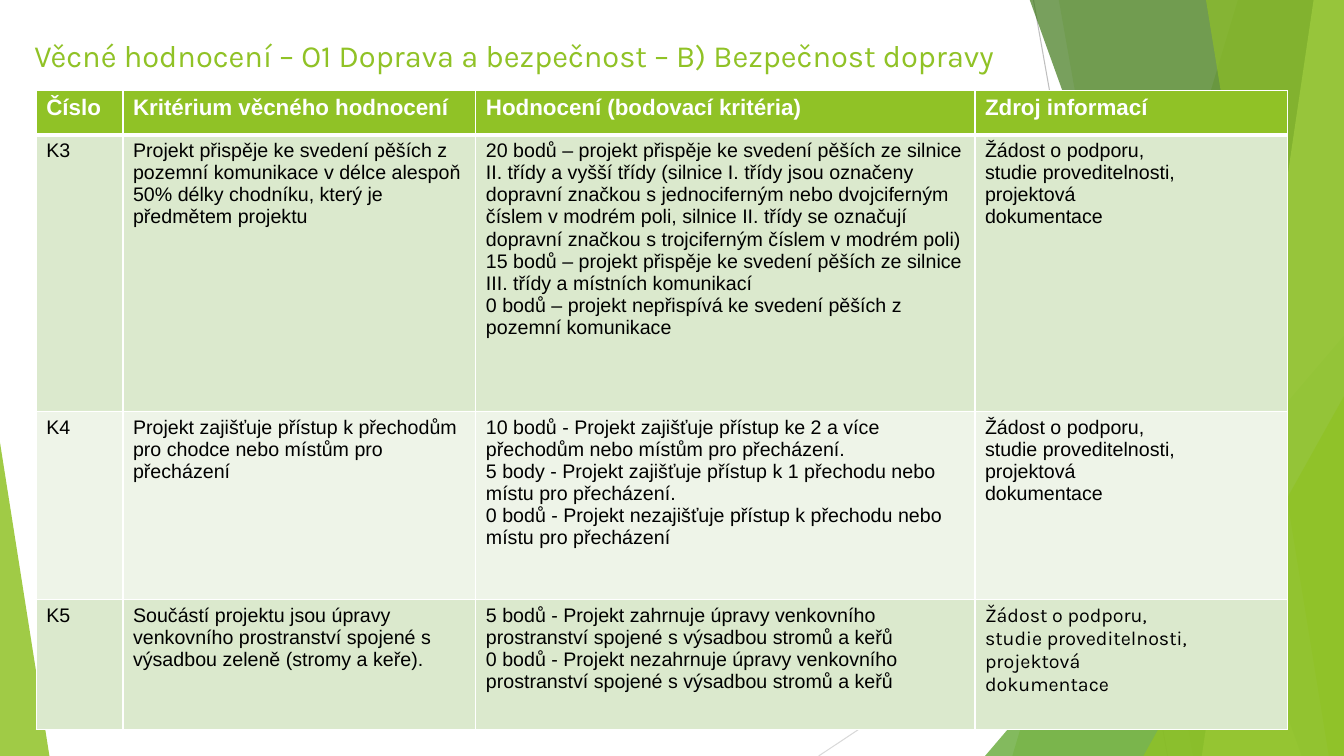
import dataclasses

import pptx
import pptx.dml.color
import pptx.enum.shapes
import pptx.enum.text
import pptx.oxml.ns
import pptx.oxml.xmlchemy
import pptx.util

SCALE = 9144  # EMU per px, 100 px to the inch
qn = pptx.oxml.ns.qn
node = pptx.oxml.xmlchemy.OxmlElement
SHAPE = pptx.enum.shapes.MSO_SHAPE


@dataclasses.dataclass(frozen=True)
class Theme:
    green: str = "90C226"
    leaf: str = "54A021"
    dark: str = "3F7819"
    lime: str = "C0E474"
    white: str = "FFFFFF"
    ink: str = "000000"
    bands: tuple = ("DBE9CD", "EEF4E8")
    grays: tuple = ("BFBFBF", "D9D9D9")
    font: str = "Arial"
    display: str = "Karla"
    title: int = 22
    head: int = 16
    body: int = 14


def px(n):
    return pptx.util.Emu(n * SCALE)


def rgb(code):
    return pptx.dml.color.RGBColor.from_string(code)


class Deck:
    def __init__(self, theme):
        self.theme = theme
        self.prs = pptx.Presentation()
        self.prs.slide_width, self.prs.slide_height = px(1333), px(750)
        self.slide = self.prs.slides.add_slide(self.prs.slide_layouts[5])
        self.shapes = self.slide.shapes

    def style(self, para, size, color, font, bold=False):
        para.font.size = pptx.util.Pt(size)
        para.font.name = font
        para.font.bold = bold
        para.font.color.rgb = rgb(color)

    def title(self, text, x, y, w, h):
        box = self.shapes.title
        box.left, box.top, box.width, box.height = map(px, (x, y, w, h))
        frame = box.text_frame
        frame.text = text
        frame.word_wrap = True
        frame.auto_size = pptx.enum.text.MSO_AUTO_SIZE.NONE
        frame.vertical_anchor = pptx.enum.text.MSO_ANCHOR.TOP
        para = frame.paragraphs[0]
        para.alignment = pptx.enum.text.PP_ALIGN.LEFT
        self.style(para, self.theme.title, self.theme.green, self.theme.display)

    def line(self, x1, y1, x2, y2, color):
        kind = pptx.enum.shapes.MSO_CONNECTOR.STRAIGHT
        line = self.shapes.add_connector(kind, px(x1), px(y1), px(x2), px(y2))
        line.line.color.rgb = rgb(color)
        line.line.width = pptx.util.Pt(0.75)
        line._element.spPr.append(node("a:effectLst"))

    def paint(self, shape, color, alpha):
        shape.shadow.inherit = False
        shape.line.fill.background()
        shape.fill.solid()
        shape.fill.fore_color.rgb = rgb(color)
        tint = node("a:alpha")
        tint.set("val", str(alpha * 1000))
        shape._element.spPr.find(qn("a:solidFill"))[0].append(tint)

    def shard(self, top, foot, color, alpha):
        """Band from a slanted left edge to the right side of the slide."""
        pen = self.shapes.build_freeform(top, -1, scale=SCALE)
        pen.add_line_segments([(1333, -1), (1333, 750), (foot, 750)], close=True)
        self.paint(pen.convert_to_shape(), color, alpha)

    def wedge(self, x, y, w, h, peak, color, alpha):
        shape = self.shapes.add_shape(
            SHAPE.ISOSCELES_TRIANGLE, px(x), px(y), px(w), px(h))
        shape.adjustments[0] = peak
        self.paint(shape, color, alpha)

    def border(self, cell, widths):
        props = cell._tc.get_or_add_tcPr()
        for side, width in zip("LRTB", widths):
            edge = node("a:ln" + side)
            edge.set("w", str(int(pptx.util.Pt(width))))
            fill = node("a:solidFill")
            color = node("a:srgbClr")
            color.set("val", self.theme.white)
            fill.append(color)
            edge.append(fill)
            props.append(edge)

    def table(self, x, y, cols, rows, data):
        t = self.theme
        grid = self.shapes.add_table(
            len(rows), len(cols), px(x), px(y), px(sum(cols)), px(sum(rows))).table
        for col, w in zip(grid.columns, cols):
            col.width = px(w)
        for r, (row, h) in enumerate(zip(grid.rows, rows)):
            row.height = px(h)
            head = r == 0
            for c, (cell, text) in enumerate(zip(row.cells, data[r])):
                self.border(cell, (1, 1, 3 if r == 1 else 1, 3 if head else 1))
                cell.fill.solid()
                cell.fill.fore_color.rgb = rgb(t.green if head else t.bands[(r - 1) % 2])
                cell.text = text
                last = r == len(rows) - 1 and c == len(cols) - 1
                for para in cell.text_frame.paragraphs:
                    self.style(para, t.head if head else t.body,
                               t.white if head else t.ink,
                               t.display if last else t.font, head)


SOURCE = "Žádost o podporu,\nstudie proveditelnosti,\nprojektová\ndokumentace"
DATA = [
    ("Číslo", "Kritérium věcného hodnocení",
     "Hodnocení (bodovací kritéria)", "Zdroj informací"),
    ("K3",
     "Projekt přispěje ke svedení pěších z pozemní komunikace v délce alespoň "
     "50% délky chodníku, který je předmětem projektu",
     "20 bodů – projekt přispěje ke svedení pěších ze silnice II. třídy a vyšší "
     "třídy (silnice I. třídy jsou označeny dopravní značkou s jednociferným "
     "nebo dvojciferným číslem v modrém poli, silnice II. třídy se označují "
     "dopravní značkou s trojciferným číslem v modrém poli)\n"
     "15 bodů – projekt přispěje ke svedení pěších ze silnice III. třídy a "
     "místních komunikací\n"
     "0 bodů – projekt nepřispívá ke svedení pěších z pozemní komunikace",
     SOURCE),
    ("K4",
     "Projekt zajišťuje přístup k přechodům pro chodce nebo místům pro přecházení",
     "10 bodů - Projekt zajišťuje přístup ke 2 a více přechodům nebo místům "
     "pro přecházení.\n"
     "5 body - Projekt zajišťuje přístup k 1 přechodu nebo místu pro přecházení.\n"
     "0 bodů - Projekt nezajišťuje přístup k přechodu nebo místu pro přecházení",
     SOURCE),
    ("K5",
     "Součástí projektu jsou úpravy venkovního prostranství spojené s výsadbou "
     "zeleně (stromy a keře).",
     "5 bodů - Projekt zahrnuje úpravy venkovního prostranství spojené s "
     "výsadbou stromů a keřů\n"
     "0 bodů - Projekt nezahrnuje úpravy venkovního prostranství spojené s "
     "výsadbou stromů a keřů",
     SOURCE),
]


def main():
    t = Theme()
    deck = Deck(t)

    # Green facets at the slide edges
    deck.line(1025, 0, 1158, 750, t.grays[0])
    deck.line(1333, 403, 812, 750, t.grays[1])
    deck.shard(1228, 1004, t.green, 30)
    deck.shard(1050, 1183, t.green, 20)
    deck.wedge(977, 333, 356, 417, 1, t.leaf, 72)
    deck.shard(1021, 1291, t.dark, 70)
    deck.shard(1303, 1192, t.lime, 70)
    deck.shard(1196, 1318, t.green, 65)
    deck.wedge(1134, 393, 199, 357, 1, t.green, 80)
    deck.wedge(0, 439, 49, 311, 0, t.green, 85)

    # Title
    deck.title("Věcné hodnocení – O1 Doprava a bezpečnost – B) Bezpečnost dopravy",
               24, 31, 1025, 59)

    # Criteria table
    deck.table(36, 90, (86, 350, 495, 310), (44, 274, 187, 129), DATA)

    deck.prs.save("out.pptx")


if __name__ == "__main__":
    main()
